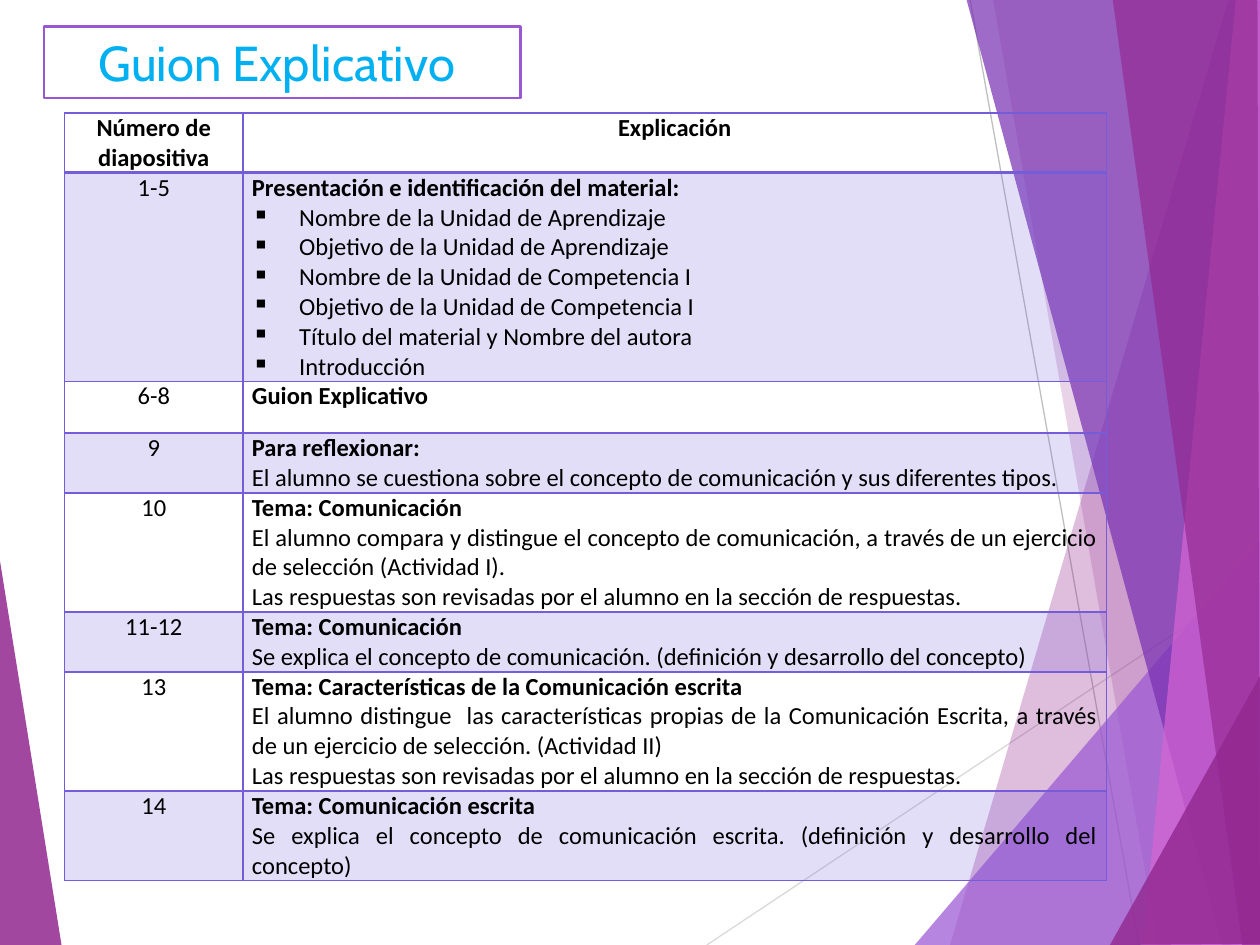
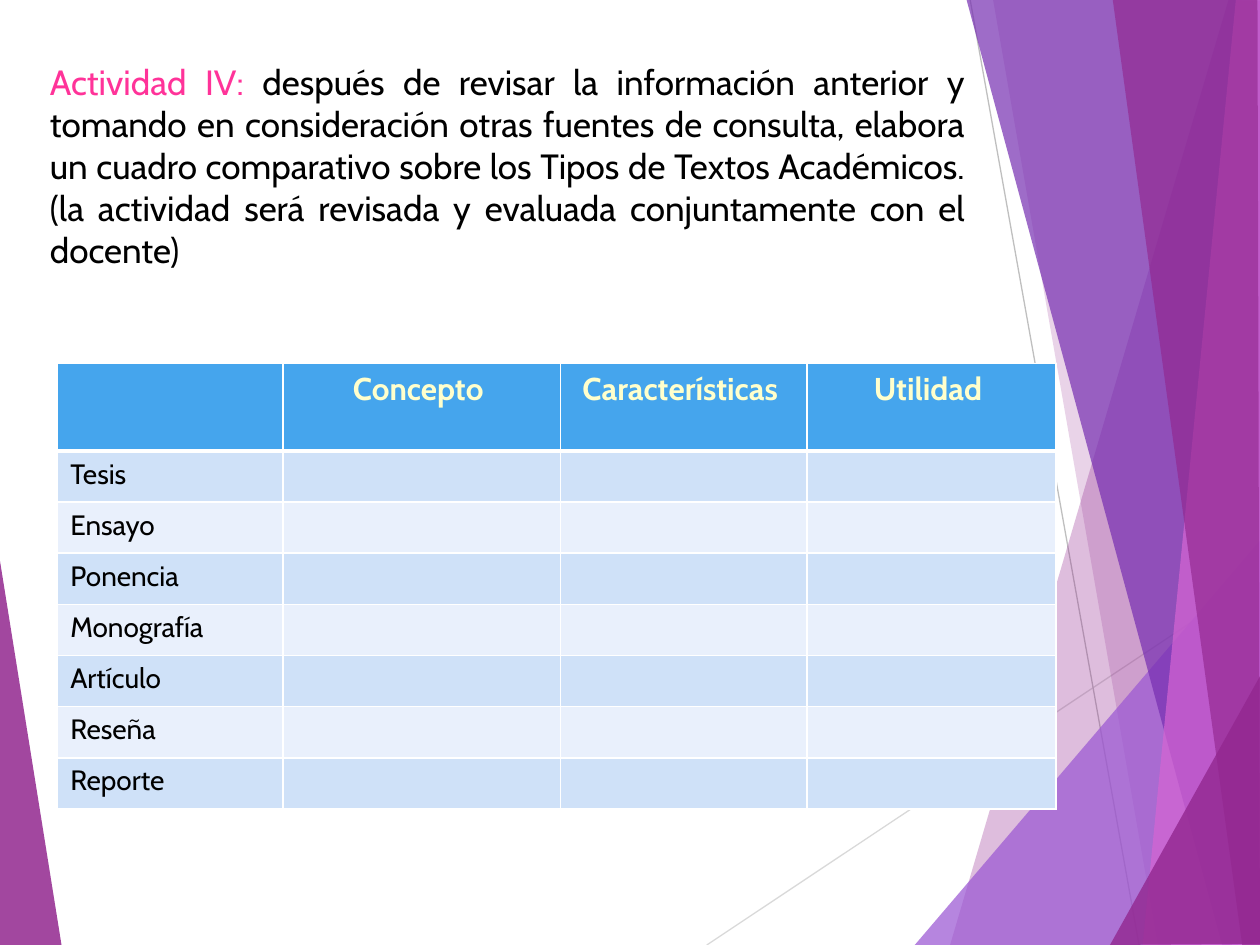
from dataclasses import dataclass

from lxml import etree
from pptx import Presentation
from pptx.dml.color import RGBColor
from pptx.enum.shapes import MSO_CONNECTOR
from pptx.enum.text import MSO_ANCHOR, MSO_AUTO_SIZE, PP_ALIGN
from pptx.oxml.ns import qn
from pptx.util import Pt

STRAIGHT = MSO_CONNECTOR.STRAIGHT
MIDDLE = MSO_ANCHOR.MIDDLE
NO_AUTOFIT = MSO_AUTO_SIZE.NONE
LEFT, CENTER, JUSTIFY = PP_ALIGN.LEFT, PP_ALIGN.CENTER, PP_ALIGN.JUSTIFY


@dataclass(frozen=True)
class Theme:
    plum: str = "92278F"
    violet: str = "9B57D3"
    indigo: str = "762EB1"
    orchid: str = "D665D3"
    pale_gray: str = "D9D9D9"
    gray: str = "BFBFBF"
    white: str = "FFFFFF"
    black: str = "000000"
    sky: str = "00B0F0"
    pink: str = "FF3399"
    cream: str = "FFFFCC"
    guide: str = "755DD9"
    header_blue: str = "45A5ED"
    band_blue: str = "CFE1F8"
    band_pale: str = "E9F0FC"
    display: str = "Cabin"
    body: str = "Calibri"
    title_size: int = 28
    prompt_size: int = 20
    header_size: int = 18
    row_size: int = 16
    guide_size: int = 14


theme = Theme()


def add_run(paragraph, text, size, font, color, bold=False):
    run = paragraph.add_run()
    run.text = text
    run.font.size = Pt(size)
    run.font.name = font
    run.font.bold = bold
    run.font.color.rgb = RGBColor.from_string(color)


def paint(fill, properties, color, opacity=100):
    """Fill with a colour, or leave clear when there is none."""
    if color is None:
        fill.background()
        return
    fill.solid()
    fill.fore_color.rgb = RGBColor.from_string(color)
    if opacity < 100:
        tint = properties.find(qn("a:solidFill")).find(qn("a:srgbClr"))
        etree.SubElement(tint, qn("a:alpha"), val=str(opacity * 1000))


prs = Presentation()
prs.slide_width, prs.slide_height = Pt(720), Pt(540)
title_only, blank = prs.slide_layouts[5], prs.slide_layouts[6]
guide_slide = prs.slides.add_slide(title_only)
activity_slide = prs.slides.add_slide(blank)

# Shared backdrop: facets and hairlines, drawn once and moved to the master
facets = [
    (theme.plum, 85, [(-0.7, 316), (35.3, 540.7), (-0.7, 540)]),
    (theme.plum, 30, [(702, 0), (542.9, 540), (721.4, 540.7), (720.7, 0.7)]),
    (theme.plum, 20, [(567.4, -0.7), (661.7, 540), (720.7, 540), (720.7, -0.7)]),
    (theme.violet, 72, [(522.7, 540), (720, 308.9), (720.7, 540)]),
    (theme.indigo, 70, [(552.2, -0.7), (698.4, 540), (720.7, 539.3), (720.7, -0.7)]),
    (theme.orchid, 70, [(706.3, -0.7), (653, 540), (720.7, 540), (720, -0.7)]),
    (theme.plum, 65, [(635.8, -0.7), (709.9, 540), (720, 540), (718.6, -0.7)]),
    (theme.plum, 80, [(634.3, 540), (720.7, 385.2), (720.7, 539.3)]),
]
hairlines = [
    (theme.pale_gray, (403.9, 540, 720.7, 329)),
    (theme.gray, (554.4, 0, 650.9, 540)),
]
backdrop = []
for color, ends in hairlines:
    hairline = guide_slide.shapes.add_connector(STRAIGHT, *[Pt(v) for v in ends])
    hairline.line.color.rgb = RGBColor.from_string(color)
    hairline.line.width = Pt(0.75)
    etree.SubElement(hairline.element.spPr, qn("a:effectLst"))
    backdrop.append(hairline)
for color, opacity, corners in facets:
    outline = [(Pt(x), Pt(y)) for x, y in corners]
    builder = guide_slide.shapes.build_freeform(*outline[0], scale=1.0)
    builder.add_line_segments(outline[1:], close=True)
    facet = builder.convert_to_shape()
    facet.shadow.inherit = False
    facet.line.fill.background()
    paint(facet.fill, facet.element.spPr, color, opacity)
    backdrop.append(facet)
for number, piece in enumerate(backdrop, start=101):
    piece.element.xpath(".//p:cNvPr")[0].set("id", str(number))
    prs.slide_master.shapes.element.append(piece.element)

# Slide 1: framed title
title = guide_slide.shapes.title
title.left, title.top, title.width, title.height = Pt(25.2), Pt(15), Pt(272.2), Pt(41)
title.fill.solid()
title.fill.fore_color.rgb = RGBColor.from_string(theme.white)
title.line.color.rgb = RGBColor.from_string(theme.violet)
title.line.width = Pt(1.5)
title.text_frame.auto_size = NO_AUTOFIT
title.text_frame.vertical_anchor = MIDDLE
heading = title.text_frame.paragraphs[0]
heading.alignment = CENTER
add_run(heading, "Guion Explicativo ", theme.title_size, theme.display, theme.sky)

# Slide 1: guide to the slides (numbers, topic, bullets, sentences)
answers = "Las respuestas son revisadas por el alumno en la sección de respuestas."
guide_rows = [
    ("1-5", "Presentación e identificación del material: ", [
        "Nombre de la Unidad de Aprendizaje",
        "Objetivo de la Unidad de Aprendizaje",
        "Nombre de la Unidad de Competencia I",
        "Objetivo de la Unidad de Competencia I",
        "Título del material y Nombre del autora",
        "Introducción"], []),
    ("6-8", "Guion Explicativo", [], []),
    ("9", "Para reflexionar:", [], [
        "El alumno se cuestiona sobre el concepto de comunicación y sus "
        "diferentes tipos. "]),
    ("10", "Tema: Comunicación", [], [
        "El alumno compara y distingue el concepto de comunicación, a través "
        "de un ejercicio de selección (Actividad I).", answers]),
    ("11-12", "Tema: Comunicación ", [], [
        "Se explica el concepto de comunicación. (definición y desarrollo del "
        "concepto)"]),
    ("13", "Tema: Características de la Comunicación escrita ", [], [
        "El alumno distingue  las características propias de la Comunicación "
        "Escrita, a través de un ejercicio de selección. (Actividad II)", answers]),
    ("14", "Tema: Comunicación escrita", [], [
        "Se explica el concepto de comunicación escrita. (definición y "
        "desarrollo del concepto)"]),
]
guide = guide_slide.shapes.add_table(
    len(guide_rows) + 1, 2, Pt(36.8), Pt(64.7), Pt(595.4), Pt(236)).table
guide.columns[0].width, guide.columns[1].width = Pt(102.2), Pt(493.2)
for cell in guide.iter_cells():
    cell.margin_left = cell.margin_right = Pt(5)
    cell.margin_top = cell.margin_bottom = 0

for column, label in enumerate(["Número de diapositiva", "Explicación"]):
    paragraph = guide.cell(0, column).text_frame.paragraphs[0]
    paragraph.alignment = CENTER
    add_run(paragraph, label, theme.guide_size, theme.body, theme.black, True)

for row, (numbers, topic, bullets, sentences) in enumerate(guide_rows, start=1):
    paragraph = guide.cell(row, 0).text_frame.paragraphs[0]
    paragraph.alignment = CENTER
    add_run(paragraph, numbers, theme.guide_size, theme.body, theme.black)

    explanation = guide.cell(row, 1).text_frame
    paragraph = explanation.paragraphs[0]
    paragraph.alignment = JUSTIFY
    add_run(paragraph, topic, theme.guide_size, theme.body, theme.black, True)
    for text in bullets + sentences:
        paragraph = explanation.add_paragraph()
        paragraph.alignment = JUSTIFY
        if text in bullets:
            settings = paragraph._p.get_or_add_pPr()
            settings.set("marL", str(Pt(27)))
            settings.set("indent", str(Pt(-27)))
            etree.SubElement(settings, qn("a:buChar"), char="▪")
        add_run(paragraph, text, theme.guide_size, theme.body, theme.black)

# Slide 2: activity instructions
instructions = activity_slide.shapes.add_textbox(
    Pt(21.4), Pt(31), Pt(537.2), Pt(128.2)).text_frame
instructions.word_wrap = True
paragraph = instructions.paragraphs[0]
paragraph.alignment = JUSTIFY
add_run(paragraph, "Actividad IV: ", theme.prompt_size, theme.display, theme.pink)
add_run(paragraph,
        "después de revisar la información anterior y tomando en consideración "
        "otras fuentes de consulta, elabora un cuadro comparativo sobre los Tipos "
        "de Textos Académicos. (la actividad será revisada y evaluada "
        "conjuntamente con el docente)",
        theme.prompt_size, theme.display, theme.black)

# Slide 2: comparison chart to be filled in
aspects = ["Concepto ", "Características ", "Utilidad "]
text_types = ["Tesis", "Ensayo", "Ponencia", "Monografía", "Artículo", "Reseña",
              "Reporte"]
comparison = activity_slide.shapes.add_table(
    len(text_types) + 1, len(aspects) + 1,
    Pt(33), Pt(207.7), Pt(570.6), Pt(254.8)).table
for column, width in zip(comparison.columns, [128.7, 158.7, 140.7, 142.5]):
    column.width = Pt(width)
for row in comparison.rows:
    row.height = Pt(29.25)
comparison.rows[0].height = Pt(50)
for column, aspect in enumerate(aspects, start=1):
    paragraph = comparison.cell(0, column).text_frame.paragraphs[0]
    paragraph.alignment = CENTER
    add_run(paragraph, aspect, theme.header_size, theme.display, theme.cream, True)
for row, text_type in enumerate(text_types, start=1):
    paragraph = comparison.cell(row, 0).text_frame.paragraphs[0]
    paragraph.alignment = LEFT
    add_run(paragraph, text_type, theme.row_size, theme.display, theme.black)

# Both tables: borders, a heavier rule under the header, and row bands
table_looks = [
    (guide, theme.guide, 2, (None, 100), (theme.guide, 20), (None, 100)),
    (comparison, theme.white, 3, (theme.header_blue, 100),
     (theme.band_blue, 100), (theme.band_pale, 100)),
]
for table, border, header_rule, header_fill, odd_fill, even_fill in table_looks:
    table.horz_banding = False
    for row_index, row in enumerate(table.rows):
        band = header_fill if row_index == 0 else (even_fill, odd_fill)[row_index % 2]
        for cell in row.cells:
            properties = cell._tc.get_or_add_tcPr()
            for side in ["lnL", "lnR", "lnT", "lnB"]:
                under_header = (row_index, side) in [(0, "lnB"), (1, "lnT")]
                width = Pt(header_rule if under_header else 1)
                edge = etree.SubElement(properties, qn("a:" + side), w=str(width))
                ink = etree.SubElement(edge, qn("a:solidFill"))
                etree.SubElement(ink, qn("a:srgbClr"), val=border)
            paint(cell.fill, properties, *band)

prs.save("out.pptx")
